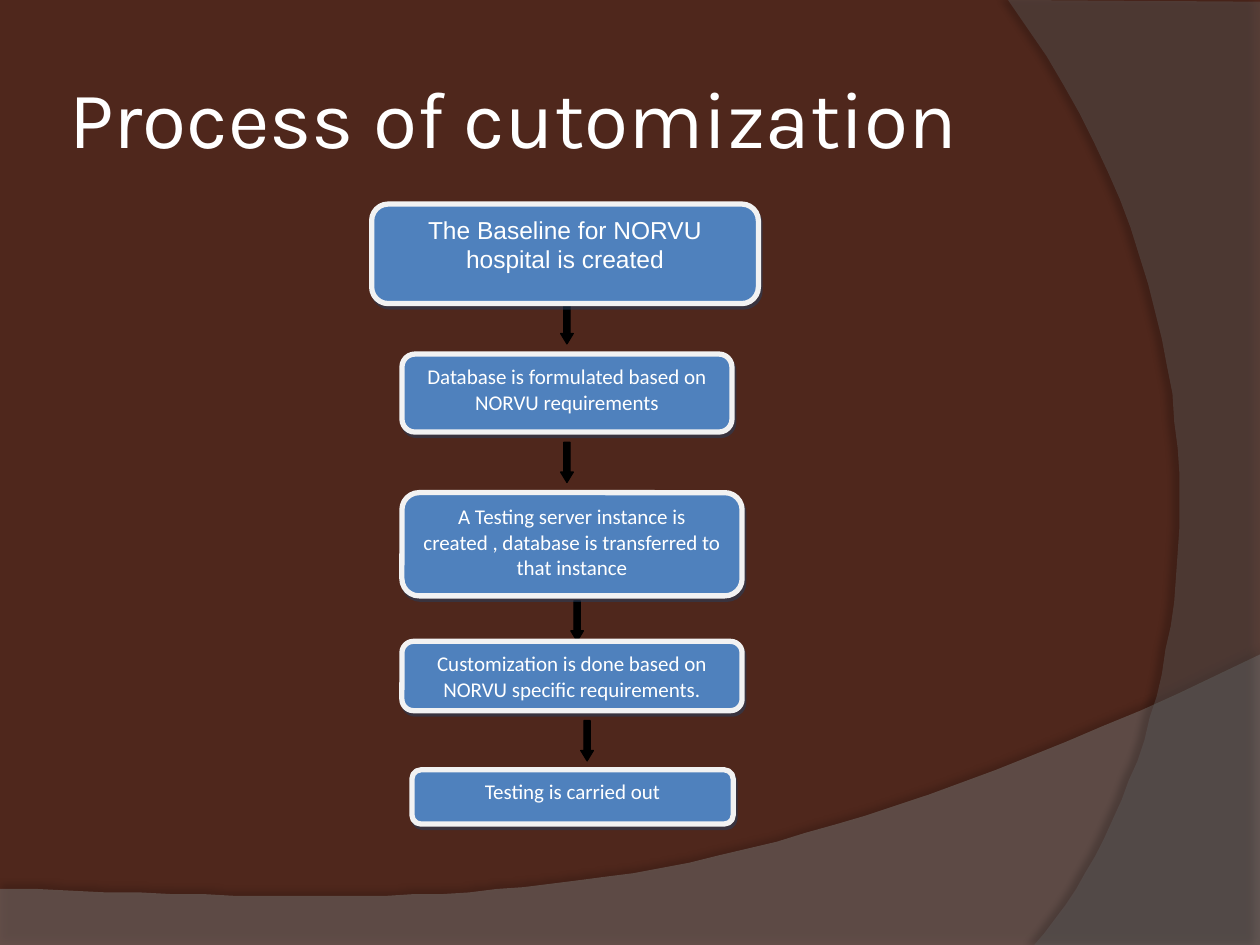
from lxml import etree
from pptx import Presentation
from pptx import oxml
from pptx.dml.color import RGBColor
from pptx.enum import shapes, text
from pptx.oxml import ns
from pptx.util import Pt

COLORS = {
    "background": "4F271C", "wave": "7F7F7F", "arc": "5E5E5E",
    "box": "4F81BD", "border": "F2F2F2", "box_shadow": "243F60",
    "black": "000000", "white": "FFFFFF",
}


def color(name):
    return RGBColor.from_string(COLORS[name])


def add_shadow(shape, name, alpha, blur, distance, angle):
    """Give the shape an outer shadow; blur and distance in points."""
    shape.shadow.inherit = False
    effects = shape._element.spPr.find(ns.qn("a:effectLst"))
    effects.append(oxml.parse_xml(
        f'<a:outerShdw {ns.nsdecls("a")} blurRad="{Pt(blur)}" dist="{Pt(distance)}" '
        f'dir="{angle * 60000}" algn="ctr" rotWithShape="0">'
        f'<a:srgbClr val="{COLORS[name]}"><a:alpha val="{alpha * 1000}"/></a:srgbClr>'
        '</a:outerShdw>'))


deck = Presentation()
deck.slide_width, deck.slide_height = Pt(720), Pt(540)
page = deck.slides.add_slide(deck.slide_layouts[5])
page.background.fill.solid()
page.background.fill.fore_color.rgb = color("background")

# Background sweeps: straight corners, then one Bezier curve closing the outline
sweeps = [
    ("wave", 45, [(0, 507.6), (0, 540), (720, 540)],
     [(720, 374.4), (402.5, 524.9), (281.5, 517.7), (0, 507.6)], (35, 4, 3.5, 270)),
    ("arc", 40, [(720, 1.4), (720, 540)],
     [(591.1, 540), (673.2, 445.7), (733, 216), (576, 0)], (45, 4, 4, 180)),
]
STEPS = 40
for name, alpha, corners, (start, pull_a, pull_b, end), shadow in sweeps:
    curve = []
    for step in range(STEPS + 1):
        t = step / STEPS
        weights = ((1 - t) ** 3, 3 * t * (1 - t) ** 2, 3 * t ** 2 * (1 - t), t ** 3)
        curve.append(tuple(
            sum(w * point[axis] for w, point in zip(weights, (start, pull_a, pull_b, end)))
            for axis in (0, 1)))
    outline = corners + curve
    builder = page.shapes.build_freeform(*outline[0], scale=Pt(1))
    builder.add_line_segments(outline[1:], close=True)
    sweep = builder.convert_to_shape()
    sweep.fill.solid()
    sweep.fill.fore_color.rgb = color(name)
    sweep.line.fill.background()
    tint = sweep._element.spPr.find(ns.qn("a:solidFill"))[0]
    etree.SubElement(tint, ns.qn("a:alpha")).set("val", str(alpha * 1000))
    add_shadow(sweep, "black", *shadow)

# Title
title = page.shapes.title
title.left, title.top, title.width, title.height = Pt(36), Pt(21.6), Pt(588), Pt(90)
frame = title.text_frame
frame.text = "Process of cutomization"
frame.vertical_anchor = text.MSO_ANCHOR.MIDDLE
frame.margin_left = frame.margin_right = Pt(3.6)
para = frame.paragraphs[0]
para.alignment = text.PP_ALIGN.LEFT
para.font.name, para.font.size = "Karla", Pt(46)
para.font.color.rgb = color("white")

# Arrows between the steps
for left, top in [(320.4, 173.5), (320.4, 252.7), (326.2, 343.4), (331.9, 411.8)]:
    arrow = page.shapes.add_shape(
        shapes.MSO_SHAPE.DOWN_ARROW, Pt(left), Pt(top), Pt(7.2), Pt(23))
    arrow.adjustments[0], arrow.adjustments[1] = 0.5, 0.82
    arrow.fill.solid()
    arrow.fill.fore_color.rgb = color("black")
    arrow.line.color.rgb = color("black")
    arrow.line.width = Pt(0.75)
    arrow.shadow.inherit = False

# Process steps: left, top, width, height, font, size, wording
steps = [
    (212.4, 116.6, 221, 56.9, "Arial", 14, "The Baseline for NORVU hospital is created"),
    (229.7, 202.3, 188.6, 44.6, "Calibri", 12,
     "Database is formulated based on NORVU requirements"),
    (229.7, 281.5, 194.4, 59, "Calibri", 12,
     "A Testing server instance is created , database is transferred to that instance"),
    (229.7, 366.5, 194.4, 39.6, "Calibri", 12,
     "Customization is done based on NORVU specific requirements."),
    (235.4, 439.9, 183.6, 31, "Calibri", 12, "Testing is carried out"),
]
for left, top, width, height, font, size, wording in steps:
    box = page.shapes.add_shape(
        shapes.MSO_SHAPE.FLOWCHART_ALTERNATE_PROCESS,
        Pt(left), Pt(top), Pt(width), Pt(height))
    box.fill.solid()
    box.fill.fore_color.rgb = color("box")
    box.line.color.rgb = color("border")
    box.line.width = Pt(3)
    add_shadow(box, "box_shadow", 50, 0, 2.2, 63)
    frame = box.text_frame
    frame.text = wording
    frame.word_wrap = True
    frame.vertical_anchor = text.MSO_ANCHOR.TOP
    para = frame.paragraphs[0]
    para.alignment = text.PP_ALIGN.CENTER
    para.font.name, para.font.size = font, Pt(size)
    para.font.color.rgb = color("white")

deck.save("out.pptx")
